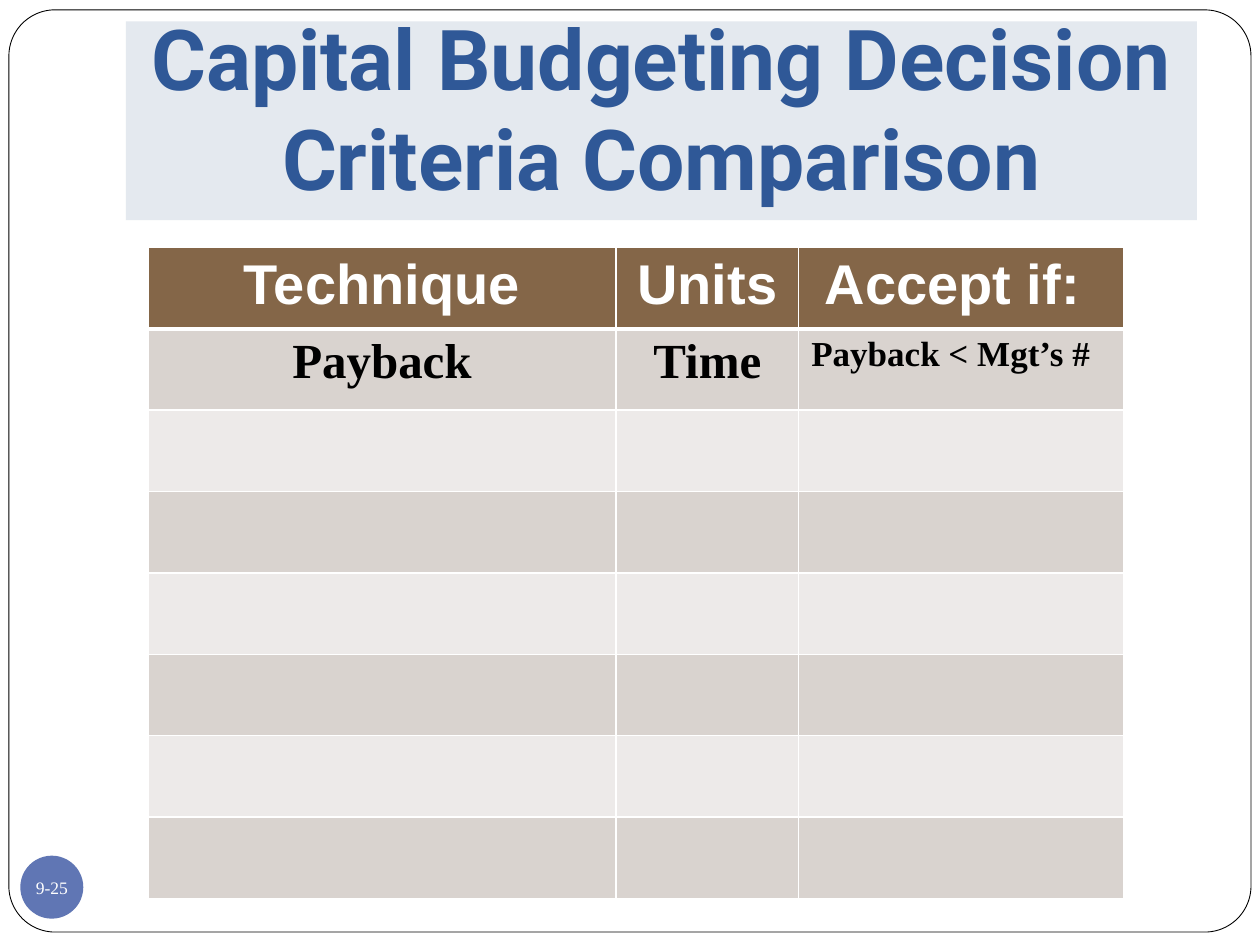
from lxml.etree import SubElement
from pptx import Presentation
from pptx.dml.color import RGBColor
from pptx.enum.shapes import MSO_SHAPE
from pptx.enum.text import MSO_ANCHOR, PP_ALIGN
from pptx.oxml.ns import qn
from pptx.util import Cm, Pt

COLORS = {
    "white": "FFFFFF",
    "black": "000000",
    "title": "2F5897",
    "title_band": "E4E9EF",
    "badge": "6076B4",
    "header": "846648",
    "odd_row": "D9D3CF",
    "even_row": "EDEAE9",
}
HEADINGS = ["Technique", "Units", " Accept if:"]
PAYBACK = ["Payback", "Time", "Payback < Mgt’s #"]
PAYBACK_SIZES = [28, 28, 20]
ALIGNMENTS = [PP_ALIGN.CENTER, PP_ALIGN.CENTER, PP_ALIGN.LEFT]
COLUMN_WIDTHS = [9.44, 3.68, 6.56]
ROW_COUNT = 8


def rgb(name):
    return RGBColor.from_string(COLORS[name])


def write_text(frame, text, font="Times New Roman", size=10, color="black",
               bold=False, align=PP_ALIGN.CENTER):
    paragraph = frame.paragraphs[0]
    paragraph.alignment = align
    run = paragraph.add_run()
    run.text = text
    run.font.name = font
    run.font.size = Pt(size)
    run.font.bold = bold
    run.font.color.rgb = rgb(color)


def add_panel(slide, kind, box, fill, outline=None):
    panel = slide.shapes.add_shape(kind, *map(Cm, box))
    panel.shadow.inherit = False
    panel.fill.solid()
    panel.fill.fore_color.rgb = rgb(fill)
    if outline:
        panel.line.color.rgb = rgb(outline)
        panel.line.width = Pt(0.5)
    else:
        panel.line.fill.background()
    return panel


def add_frame(slide, box):
    border = add_panel(slide, MSO_SHAPE.ROUNDED_RECTANGLE, box, "white", "black")
    border.adjustments[0] = 0.05


def add_page_badge(slide, box):
    frame = add_panel(slide, MSO_SHAPE.OVAL, box, "badge").text_frame
    frame.margin_left = frame.margin_right = frame.margin_top = frame.margin_bottom = 0
    frame.word_wrap = False
    frame.vertical_anchor = MSO_ANCHOR.MIDDLE
    write_text(frame, "9-25", color="white")


def add_title(slide, box):
    frame = add_panel(slide, MSO_SHAPE.RECTANGLE, box, "title_band").text_frame
    frame.word_wrap = True
    frame.vertical_anchor = MSO_ANCHOR.BOTTOM
    frame.margin_bottom = Cm(0.25)
    write_text(frame, "Capital Budgeting Decision Criteria Comparison",
               font="Roboto", size=48, color="title", bold=True)


def set_borders(cell, widths):
    properties = cell._tc.get_or_add_tcPr()
    for position, (side, width) in enumerate(widths.items()):
        border = properties.makeelement(qn(f"a:{side}"), {"w": str(Pt(width))})
        properties.insert(position, border)
        SubElement(SubElement(border, qn("a:solidFill")), qn("a:srgbClr"),
                   val=COLORS["white"])


def add_criteria_table(slide, box):
    table = slide.shapes.add_table(ROW_COUNT, len(HEADINGS), *map(Cm, box)).table
    for column, width in zip(table.columns, COLUMN_WIDTHS):
        column.width = Cm(width)
    for index, row in enumerate(table.rows):
        row.height = Cm(box[3] / ROW_COUNT)
        row_fill = "header" if index == 0 else "odd_row" if index % 2 else "even_row"
        top = 3 if index == 1 else 1
        bottom = 3 if index == 0 else 1
        for cell in row.cells:
            cell.fill.solid()
            cell.fill.fore_color.rgb = rgb(row_fill)
            set_borders(cell, {"lnL": 1, "lnR": 1, "lnT": top, "lnB": bottom})
    for column, align in enumerate(ALIGNMENTS):
        write_text(table.cell(0, column).text_frame, HEADINGS[column], font="Arial",
                   size=32, color="white", bold=True, align=align)
        write_text(table.cell(1, column).text_frame, PAYBACK[column],
                   size=PAYBACK_SIZES[column], bold=True, align=align)


def main():
    presentation = Presentation()
    presentation.slide_width = Cm(25.4)
    presentation.slide_height = Cm(19.05)
    slide = presentation.slides.add_slide(presentation.slide_layouts[6])
    add_frame(slide, (0.18, 0.2, 25.04, 18.59))
    add_page_badge(slide, (0.41, 17.25, 1.27, 1.27))
    add_title(slide, (2.54, 0.43, 21.59, 4.01))
    add_criteria_table(slide, (2.98, 4.99, 19.68, 13.12))
    presentation.save("out.pptx")


if __name__ == "__main__":
    main()
